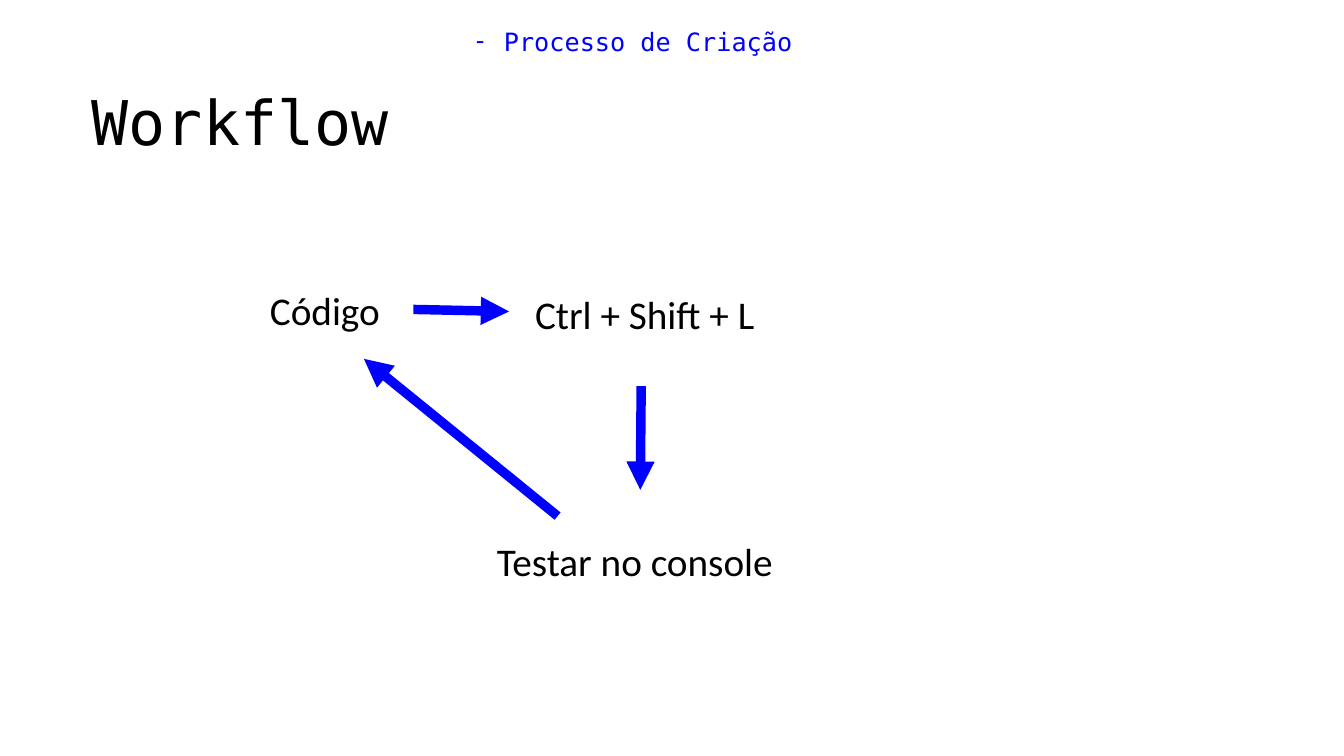
from dataclasses import dataclass

from lxml.etree import SubElement
from pptx import Presentation
from pptx.dml.color import RGBColor
from pptx.enum.shapes import MSO_CONNECTOR as Connector
from pptx.enum.text import MSO_ANCHOR as Anchor, MSO_AUTO_SIZE as AutoSize, PP_ALIGN as Align
from pptx.oxml.ns import qn
from pptx.util import Inches, Pt


@dataclass(frozen=True)
class Theme:
    """Colours, fonts and type sizes of the slide."""
    ink: RGBColor = RGBColor(0, 0, 0)
    accent: RGBColor = RGBColor(0, 0, 255)
    body_font: str = "Calibri"
    code_font: str = "DejaVu Sans Mono"
    title_size: float = 44
    step_size: float = 28
    topic_size: float = 18
    arrow_width: float = 6.75


class WorkflowSlide:
    """Draws on one slide, with places given in percent of its size."""

    def __init__(self, deck, theme):
        """Add a title-only page to the deck."""
        self.deck = deck
        self.theme = theme
        self.page = deck.slides.add_slide(deck.slide_layouts[5])

    def across(self, share):
        """Turn a percentage of the width into a length."""
        return round(self.deck.slide_width * share / 100)

    def down(self, share):
        """Turn a percentage of the height into a length."""
        return round(self.deck.slide_height * share / 100)

    def style(self, para, font, size, colour):
        """Set the type of a whole paragraph."""
        para.font.name = font
        para.font.size = Pt(size)
        para.font.color.rgb = colour

    def title(self, text, left, top, width, height):
        """Place and format the title placeholder."""
        box = self.page.shapes.title
        box.left, box.top = self.across(left), self.down(top)
        box.width, box.height = self.across(width), self.down(height)
        frame = box.text_frame
        frame.text = text
        frame.vertical_anchor = Anchor.MIDDLE
        frame.auto_size = AutoSize.NONE
        para = frame.paragraphs[0]
        para.alignment = Align.LEFT
        para.line_spacing = 0.9
        self.style(para, self.theme.code_font, self.theme.title_size, self.theme.ink)

    def text_box(self, text, left, top, width, height):
        """Add a wrapping text box and return its paragraph."""
        box = self.page.shapes.add_textbox(
            self.across(left), self.down(top), self.across(width), self.down(height))
        frame = box.text_frame
        frame.word_wrap = True
        frame.auto_size = AutoSize.SHAPE_TO_FIT_TEXT
        frame.text = text
        return frame.paragraphs[0]

    def step(self, text, *place):
        """Add the label of one workflow step."""
        para = self.text_box(text, *place)
        self.style(para, self.theme.body_font, self.theme.step_size, self.theme.ink)

    def topic(self, text, *place):
        """Add the dashed topic line at the top."""
        para = self.text_box(text, *place)
        indent = Inches(0.31)
        properties = para._p.get_or_add_pPr()
        properties.set("marL", str(indent))
        properties.set("indent", str(-indent))
        SubElement(properties, qn("a:buFont"), typeface=self.theme.code_font)
        SubElement(properties, qn("a:buChar"), char="-")
        self.style(para, self.theme.code_font, self.theme.topic_size, self.theme.accent)

    def arrow(self, start, end):
        """Add a thick arrow between two points."""
        arrow = self.page.shapes.add_connector(
            Connector.STRAIGHT, self.across(start[0]), self.down(start[1]),
            self.across(end[0]), self.down(end[1]))
        arrow.line.color.rgb = self.theme.accent
        arrow.line.width = Pt(self.theme.arrow_width)
        SubElement(arrow.line._get_or_add_ln(), qn("a:tailEnd"), type="triangle")
        SubElement(arrow._element.spPr, qn("a:effectLst"))


def main():
    """Build the workflow slide and save it."""
    deck = Presentation()
    deck.slide_width, deck.slide_height = Inches(13.33), Inches(7.5)
    slide = WorkflowSlide(deck, Theme())
    slide.title("Workflow", 6.08, 10.27, 86.27, 12.67)
    slide.arrow((30.76, 40.93), (37.88, 41.2))
    slide.arrow((47.71, 51.07), (47.64, 64.8))
    slide.arrow((41.49, 68.27), (27.08, 47.47))
    slide.step("Código", 19.35, 37.2, 11.4, 7.6)
    slide.step("Ctrl + Shift + L", 39.08, 37.73, 24.01, 7.6)
    slide.step("Testar no console", 36.23, 70.4, 24.91, 7.6)
    slide.topic("Processo de Criação", 34.43, 2.8, 30.53, 5.33)
    deck.save("out.pptx")


if __name__ == "__main__":
    main()
